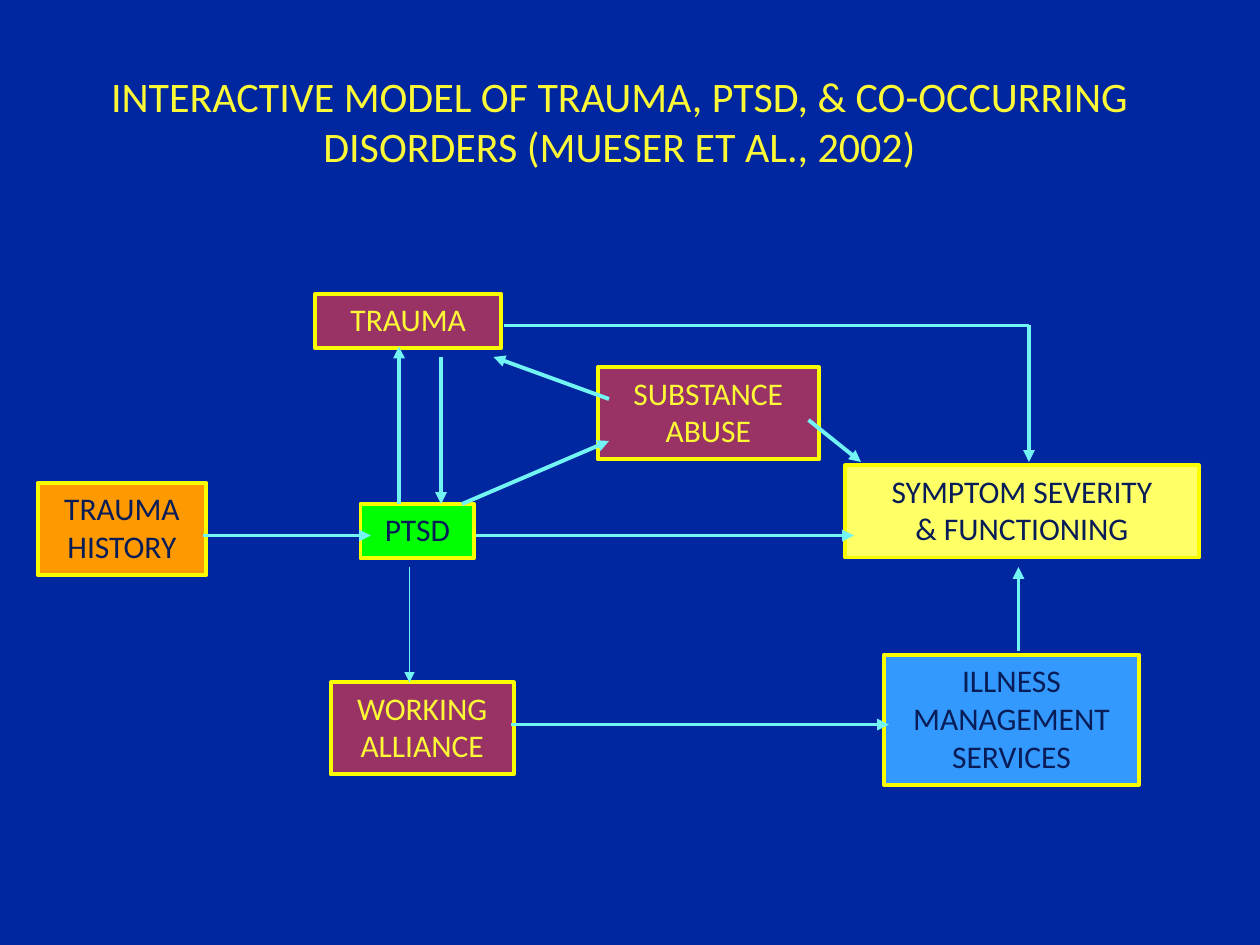
from lxml import etree
from pptx import Presentation
from pptx import util as u
from pptx.dml.color import RGBColor
from pptx.enum import shapes, text
from pptx.oxml.ns import qn

THEME = {
    "font": "Calibri",
    "title_size": 24,
    "box_size": 18,
    "border_width": 2.25,
    "background": "00279F",
    "border": "FAFD00",
    "arrow": "72F4F4",
    "light": "FEF936",
    "dark": "081D58",
    "plum": "993366",
    "green": "00FF00",
    "orange": "FF9900",
    "yellow": "FFFF66",
    "blue": "3399FF",
}
SLIDE_SIZE = (720, 540)
LINE_HEIGHT = 21.6
BOX_PADDING = 9.4

TITLE = "INTERACTIVE MODEL OF TRAUMA, PTSD, & CO-OCCURRING DISORDERS (MUESER ET AL., 2002)"
TITLE_AREA = (24, 30, 660, 78)

BOXES = [
    (["TRAUMA"], 180, 168, 106.5, "plum", "light"),
    (["PTSD"], 206, 288, 65, "green", "dark"),
    (["WORKING", "ALLIANCE"], 189, 390, 104.5, "plum", "light"),
    (["TRAUMA", "HISTORY"], 21.5, 276, 96.5, "orange", "dark"),
    (["SUBSTANCE", "ABUSE"], 341.5, 210, 126.5, "plum", "light"),
    (["SYMPTOM SEVERITY", "& FUNCTIONING"], 483, 266, 202, "yellow", "dark"),
    (["ILLNESS", "MANAGEMENT", "SERVICES"], 505, 374.2, 146, "blue", "dark"),
]

THICK, THIN = 2.25, 1
ARROWS = [
    ((116, 306), (212, 306), THICK, True),
    ((228, 288), (228, 198), THICK, True),
    ((252, 204), (252, 288), THICK, True),
    ((264, 288), (348, 252), THICK, True),
    ((348, 228), (282, 204), THICK, True),
    ((288, 186), (588, 186), THICK, False),
    ((588, 186), (588, 264), THICK, True),
    ((582, 372), (582, 324), THICK, True),
    ((292, 414), (508, 414), THICK, True),
    ((462, 240), (492, 264), THICK, True),
    ((272, 306), (488, 306), THICK, True),
    ((234, 324), (234, 390), THIN, True),
]


def color(name):
    return RGBColor.from_string(THEME[name])


def points(values):
    return [u.Pt(value) for value in values]


def write(frame, lines, size, color_name):
    frame.text = "\n".join(lines)
    for paragraph in frame.paragraphs:
        paragraph.alignment = text.PP_ALIGN.CENTER
        paragraph.font.name = THEME["font"]
        paragraph.font.size = u.Pt(size)
        paragraph.font.color.rgb = color(color_name)


def add_title(slide):
    frame = slide.shapes.add_textbox(*points(TITLE_AREA)).text_frame
    frame.word_wrap = True
    frame.vertical_anchor = text.MSO_ANCHOR.MIDDLE
    write(frame, [TITLE], THEME["title_size"], "light")


def add_box(slide, lines, left, top, width, fill, ink):
    height = BOX_PADDING + LINE_HEIGHT * len(lines)
    shape = slide.shapes.add_shape(
        shapes.MSO_SHAPE.RECTANGLE, *points((left, top, width, height))
    )
    shape.shadow.inherit = False
    shape.fill.solid()
    shape.fill.fore_color.rgb = color(fill)
    shape.line.color.rgb = color("border")
    shape.line.width = u.Pt(THEME["border_width"])
    frame = shape.text_frame
    frame.word_wrap = len(lines) == 1 and lines[0] == "TRAUMA"
    frame.auto_size = text.MSO_AUTO_SIZE.SHAPE_TO_FIT_TEXT
    frame.vertical_anchor = text.MSO_ANCHOR.TOP
    write(frame, lines, THEME["box_size"], ink)


def add_arrow(slide, start, end, width, has_head):
    connector = slide.shapes.add_connector(
        shapes.MSO_CONNECTOR.STRAIGHT, *points(start + end)
    )
    connector.line.color.rgb = color("arrow")
    connector.line.width = u.Pt(width)
    properties = connector._element.spPr
    if has_head:
        line = properties.find(qn("a:ln"))
        etree.SubElement(line, qn("a:tailEnd"), type="triangle")
    etree.SubElement(properties, qn("a:effectLst"))


def main():
    presentation = Presentation()
    presentation.slide_width, presentation.slide_height = points(SLIDE_SIZE)
    slide = presentation.slides.add_slide(presentation.slide_layouts[6])
    slide.background.fill.solid()
    slide.background.fill.fore_color.rgb = color("background")
    add_title(slide)
    for box in BOXES:
        add_box(slide, *box)
    for arrow in ARROWS:
        add_arrow(slide, *arrow)
    presentation.save("out.pptx")


if __name__ == "__main__":
    main()
